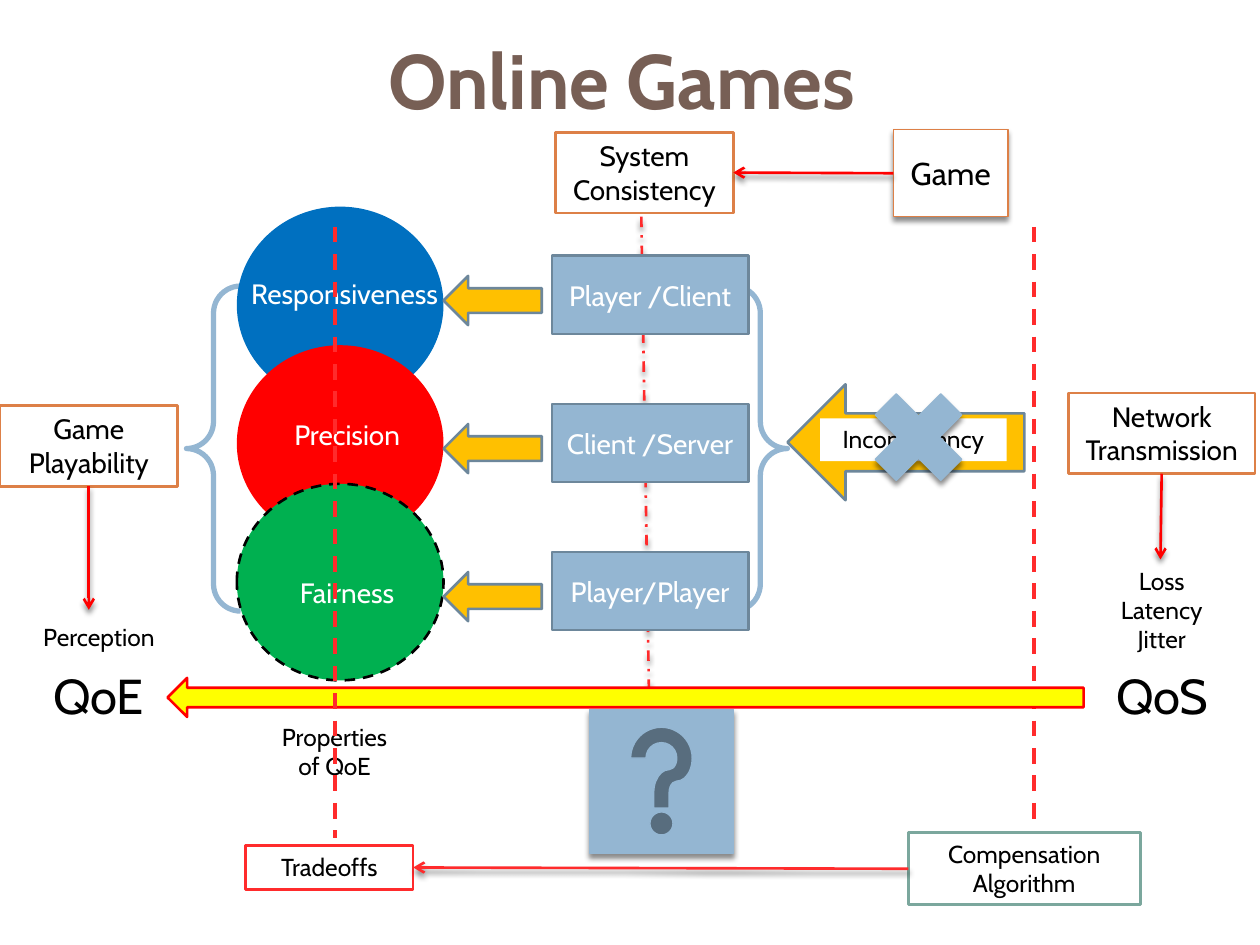
from lxml import etree
from pptx import Presentation
from pptx.dml.color import RGBColor
from pptx.enum.dml import MSO_LINE
from pptx.enum.shapes import MSO_CONNECTOR, MSO_SHAPE
from pptx.enum.text import MSO_ANCHOR, PP_ALIGN
from pptx.oxml.ns import qn
from pptx.util import Inches, Pt

RECT, OVAL, ARROW = MSO_SHAPE.RECTANGLE, MSO_SHAPE.OVAL, MSO_SHAPE.RIGHT_ARROW
BRACES, CROSS, HELP = MSO_SHAPE.DOUBLE_BRACE, MSO_SHAPE.MATH_MULTIPLY, MSO_SHAPE.ACTION_BUTTON_HELP
STRAIGHT = MSO_CONNECTOR.STRAIGHT
DASH, DASH_DOT = MSO_LINE.DASH, MSO_LINE.DASH_DOT
MIDDLE, ANCHOR_TOP = MSO_ANCHOR.MIDDLE, MSO_ANCHOR.TOP
CENTER = PP_ALIGN.CENTER
TOP, LEFT, BOTTOM, RIGHT = range(4)

FONT = "Cabin"
BLACK = RGBColor(0x00, 0x00, 0x00)
WHITE = RGBColor(0xFF, 0xFF, 0xFF)
BROWN = RGBColor(0x77, 0x5F, 0x55)
ORANGE = RGBColor(0xDD, 0x80, 0x47)
SAGE = RGBColor(0x7B, 0xA7, 0x9D)
SKY = RGBColor(0x94, 0xB6, 0xD2)
STEEL = RGBColor(0x6D, 0x87, 0x9B)
GOLD = RGBColor(0xFF, 0xC0, 0x00)
YELLOW = RGBColor(0xFF, 0xFF, 0x00)
BLUE = RGBColor(0x00, 0x70, 0xC0)
RED = RGBColor(0xFF, 0x00, 0x00)
SOFT_RED = RGBColor(0xFF, 0x2B, 0x2C)
GREEN = RGBColor(0x00, 0xB0, 0x50)


def set_shadow(sp, visible):
    pr = sp._element.spPr
    for old in pr.findall(qn("a:effectLst")):
        pr.remove(old)
    effects = etree.SubElement(pr, qn("a:effectLst"))
    if visible:
        outer = etree.SubElement(effects, qn("a:outerShdw"), blurRad="38100",
                                 dist="30480", dir="5400000", rotWithShape="0")
        color = etree.SubElement(outer, qn("a:srgbClr"), val=str(BLACK))
        etree.SubElement(color, qn("a:alpha"), val="45000")


def add_text(sp, text, size, color=BLACK, anchor=ANCHOR_TOP, bold=False):
    tf = sp.text_frame
    tf.word_wrap = True
    tf.vertical_anchor = anchor
    tf.margin_left = tf.margin_right = Inches(0.05)
    tf.text = text
    for p in tf.paragraphs:
        p.alignment = CENTER
        for r in p.runs:
            r.font.name, r.font.size, r.font.bold = FONT, Pt(size), bold
            r.font.color.rgb = color


def add_label(s, box, text, size, color=WHITE, bold=False, anchor=MIDDLE):
    sp = s.shapes.add_textbox(*map(Inches, box))
    add_text(sp, text, size, color, anchor, bold)
    return sp


def add_shape(s, kind, box, fill=None, line=None, width=1.5, shadow=False):
    sp = s.shapes.add_shape(kind, *map(Inches, box))
    if fill is None:
        sp.fill.background()
    else:
        sp.fill.solid()
        sp.fill.fore_color.rgb = fill
    if line is None:
        sp.line.fill.background()
    else:
        sp.line.color.rgb = line
        sp.line.width = Pt(width)
    set_shadow(sp, shadow)
    return sp


def add_note(s, box, text, size, line=None):
    sp = add_shape(s, RECT, box, WHITE, line)
    add_text(sp, text, size)
    return sp


def add_left_arrow(s, box, fill, line):
    add_shape(s, ARROW, box, fill, line).rotation = 180


def add_line(s, x1, y1, x2, y2, color, width=1.5, dash=None, shadow=False):
    cx = s.shapes.add_connector(STRAIGHT, *map(Inches, (x1, y1, x2, y2)))
    cx.line.color.rgb = color
    cx.line.width = Pt(width)
    if dash is not None:
        cx.line.dash_style = dash
    set_shadow(cx, shadow)
    return cx


def add_pointer(s, start, side, x, y, color=RED, end=None, end_side=None):
    cx = add_line(s, x, y, x, y, color, shadow=True)
    cx.begin_connect(start, side)
    if end is not None:
        cx.end_connect(end, end_side)
    etree.SubElement(cx.line._get_or_add_ln(), qn("a:tailEnd"), type="arrow")


def add_title(s, x, y, w, h):
    add_label(s, (x, y, w, h), "Online Games", 44, BROWN, True, ANCHOR_TOP)


def add_consistency(s, x, y, w, h):
    add_line(s, x + 0.68, y + 0.69, x + 0.74, y + 4.44, SOFT_RED,
             dash=DASH_DOT, shadow=True)
    system = add_note(s, (x, y + 0.02, 1.41, 0.64), "System\nConsistency", 16, ORANGE)
    game = add_shape(s, RECT, (x + w - 0.91, y, 0.91, 0.69), WHITE, ORANGE, 0.79, True)
    add_text(game, "Game", 18, anchor=MIDDLE)
    add_pointer(s, game, LEFT, x, y, RED, system, RIGHT)


def add_playability(s, x, y, w, h):
    box = add_note(s, (x, y, w, 0.64), "Game Playability", 16, ORANGE)
    add_note(s, (x + 0.16, y + 1.67, 1.25, 0.34), "Perception", 14)
    add_note(s, (x + 0.08, y + 2.01, w, 0.57), "QoE", 28)
    add_pointer(s, box, BOTTOM, x + w / 2, y + 1.62)


def add_network(s, x, y, w, h):
    box = add_note(s, (x, y, w, 0.64), "Network Transmission", 16, ORANGE)
    add_note(s, (x + 0.04, y + 2.11, 1.41, 0.57), "QoS", 28)
    add_note(s, (x + 0.23, y + 1.32, 1.02, 0.81), "Loss\nLatency\nJitter", 14)
    add_pointer(s, box, BOTTOM, x + 0.73, y + 1.32)


def add_properties(s, x, y, w, h):
    step = 1.1
    circles = [add_shape(s, OVAL, (x, y + i * step, w, 1.56), fill)
               for i, fill in enumerate((BLUE, RED, GREEN))]
    circles[-1].line.color.rgb = BLACK
    circles[-1].line.width = Pt(1.5)
    circles[-1].line.dash_style = DASH
    add_label(s, (x, y + 0.47, 1.71, 0.43), "Responsiveness", 16)
    for text, top in (("Precision", 1.72), ("Fairness", 2.97)):
        sp = add_label(s, (x + 0.3, y + top, 1.15, 0.43), text, 16)
        sp.text_frame.margin_bottom = Inches(0.3)
    add_note(s, (x + 0.09, y + 4.04, 1.37, 0.57), "Properties\nof QoE", 14)


def add_links(s, x, y, w, h):
    step = 1.175
    for i, text in enumerate(("Player /Client", "Client /Server", "Player/Player")):
        top = y + i * step
        sp = add_shape(s, RECT, (x + w - 1.56, top, 1.56, 0.62), SKY, STEEL)
        add_text(sp, text, 16, WHITE, MIDDLE)
        add_left_arrow(s, (x, top + 0.16, 0.78, 0.39), GOLD, STEEL)


def add_inconsistency(s, x, y, w, h):
    add_left_arrow(s, (x, y, w, h), GOLD, STEEL)
    add_note(s, (x + 0.26, y + 0.27, 1.48, 0.34), "Inconsistency", 14)
    add_shape(s, CROSS, (x + 0.54, y - 0.08, 1, 1), SKY, SKY, 0.79, True)


def add_tradeoffs(s, x, y, w, h):
    add_line(s, x + 6.26, y, x + 6.26, y + 4.76, SOFT_RED, 2.25, DASH)
    add_left_arrow(s, (x - 0.62, y + 3.58, 7.27, 0.31), YELLOW, RED)
    add_line(s, x + 0.71, y, x + 0.71, y + 4.85, SOFT_RED, 2.25, DASH)
    add_shape(s, HELP, (x + 2.73, y + 3.83, 1.14, 1.14), SKY, SKY, 0.79, True)
    algorithm = add_note(s, (x + w - 1.84, y + h - 0.57, 1.84, 0.57),
                         "Compensation\nAlgorithm", 14, SAGE)
    tradeoffs = add_note(s, (x, y + 4.91, 1.33, 0.35), "Tradeoffs", 14, SOFT_RED)
    add_pointer(s, algorithm, LEFT, x, y, SOFT_RED, tradeoffs, RIGHT)


def main():
    prs = Presentation()
    prs.slide_width, prs.slide_height = Inches(10), Inches(7.5)
    s = prs.slides.add_slide(prs.slide_layouts[6])
    add_consistency(s, 4.41, 1.03, 3.59, 0.69)
    add_title(s, 1.38, 0.21, 7.11, 0.94)
    add_shape(s, BRACES, (1.48, 2.27, 4.77, 2.58), line=SKY, width=3)
    add_playability(s, 0, 3.22, 1.41, 2.58)
    add_network(s, 8.48, 3.12, 1.48, 2.68)
    add_properties(s, 1.88, 1.64, 1.64, 4.61)
    add_links(s, 3.52, 2.03, 2.42, 2.97)
    add_inconsistency(s, 6.25, 3.05, 1.88, 0.92)
    add_tradeoffs(s, 1.95, 1.8, 7.1, 5.38)
    prs.save("out.pptx")


if __name__ == "__main__":
    main()
